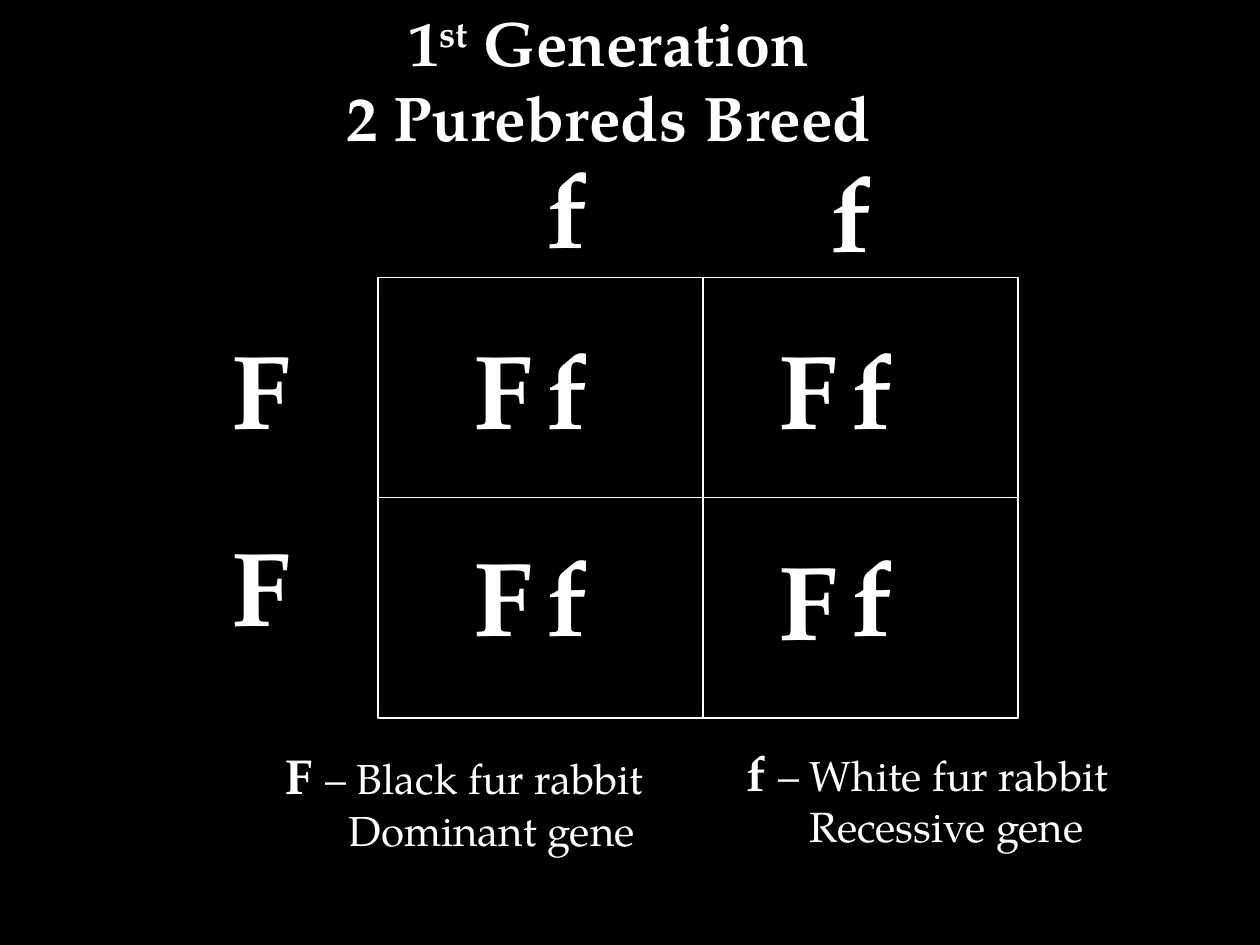
import lxml.etree
import pptx
import pptx.dml.color
import pptx.enum.shapes
import pptx.enum.text
import pptx.oxml.ns
import pptx.util

Inches = pptx.util.Inches
color = pptx.dml.color.RGBColor.from_string
qn = pptx.oxml.ns.qn
WHITE = "FFFFFF"
ALIGN = pptx.enum.text.PP_ALIGN
AUTO_SIZE = pptx.enum.text.MSO_AUTO_SIZE

presentation = pptx.Presentation()
presentation.slide_width = Inches(10)
presentation.slide_height = Inches(7.5)
slide = presentation.slides.add_slide(presentation.slide_layouts[6])
slide.background.fill.solid()
slide.background.fill.fore_color.rgb = color("000000")


def add_run(paragraph, text, size=60, bold=True, baseline=None):
    run = paragraph.add_run()
    run.text = text
    run.font.name = "TeX Gyre Pagella"
    run.font.size = pptx.util.Pt(size)
    run.font.bold = bold
    run.font.color.rgb = color(WHITE)
    if baseline:
        run.font._element.set("baseline", str(baseline * 1000))


def add_box(left, top, width, height, align=ALIGN.CENTER, auto_size=AUTO_SIZE.SHAPE_TO_FIT_TEXT):
    box = slide.shapes.add_textbox(Inches(left), Inches(top), Inches(width), Inches(height))
    frame = box.text_frame
    frame.word_wrap = True
    frame.auto_size = auto_size
    frame.paragraphs[0].alignment = align
    return frame


# Title
title = add_box(0.33, 0, 9, 1.25, auto_size=AUTO_SIZE.NONE)
title.vertical_anchor = pptx.enum.text.MSO_ANCHOR.MIDDLE
paragraph = title.paragraphs[0]
add_run(paragraph, "1", size=36)
add_run(paragraph, "st", size=36, baseline=30)
add_run(paragraph, " Generation", size=36)
paragraph.add_line_break()
add_run(paragraph, "2 Purebreds Breed", size=36)

# Punnett square with a soft glow
left, top, width, height = 3, 2.2, 5.08, 3.5
middle_x, middle_y = 5.58, top + height / 2
square = slide.shapes.add_shape(
    pptx.enum.shapes.MSO_SHAPE.RECTANGLE, Inches(left), Inches(top), Inches(width), Inches(height))
square.shadow.inherit = False
square.fill.background()
square.line.color.rgb = color(WHITE)
square.line.width = pptx.util.Pt(0.75)
effects = square._element.spPr.find(qn("a:effectLst"))
shadow = lxml.etree.SubElement(
    effects, qn("a:outerShdw"), blurRad=str(pptx.util.Pt(9)), dist="0", dir="0")
shadow_color = lxml.etree.SubElement(shadow, qn("a:srgbClr"), val="5F5F5F")
lxml.etree.SubElement(shadow_color, qn("a:alpha"), val="50000")

# Dividers
dividers = []
for ends in [(middle_x, top, middle_x, top + height), (left, middle_y, left + width, middle_y)]:
    divider = slide.shapes.add_connector(
        pptx.enum.shapes.MSO_CONNECTOR.STRAIGHT, *[Inches(value) for value in ends])
    divider.line.color.rgb = color(WHITE)
    divider.line.width = pptx.util.Pt(0.75)
    lxml.etree.SubElement(divider._element.spPr, qn("a:effectLst"))
    dividers.append(divider)
dividers[1].begin_connect(square, 1)
dividers[1].end_connect(square, 3)

# Parent alleles beside and above the square, then the offspring pairs
alleles = [
    ("F", 1.58, 2.53), ("F", 1.58, 4.09),
    ("f", 4, 1.09), ("f", 6.25, 1.12),
    ("F", 3.5, 2.53), ("f", 4, 2.53), ("F", 5.92, 2.53), ("f", 6.42, 2.53),
    ("F", 3.5, 4.17), ("f", 4, 4.17), ("F", 5.92, 4.2), ("f", 6.42, 4.17),
]
for allele, allele_left, allele_top in alleles:
    add_run(add_box(allele_left, allele_top, 1, 1.11).paragraphs[0], allele)

# Legend
for allele, meaning, gene, legend_left, legend_top in [
    ("f", "White fur rabbit", "Recessive gene", 5.83, 5.84),
    ("F", "Black fur rabbit", "Dominant gene", 2.17, 5.87),
]:
    legend = add_box(legend_left, legend_top, 3.83, 0.98, align=ALIGN.LEFT)
    add_run(legend.paragraphs[0], allele + " ", size=28)
    add_run(legend.paragraphs[0], "– " + meaning, size=24, bold=False)
    paragraph = legend.add_paragraph()
    tabs = lxml.etree.SubElement(paragraph._p.get_or_add_pPr(), qn("a:tabLst"))
    lxml.etree.SubElement(tabs, qn("a:tab"), pos=str(Inches(0.5)), algn="l")
    add_run(paragraph, "\t" + gene, size=24, bold=False)

presentation.save("out.pptx")
